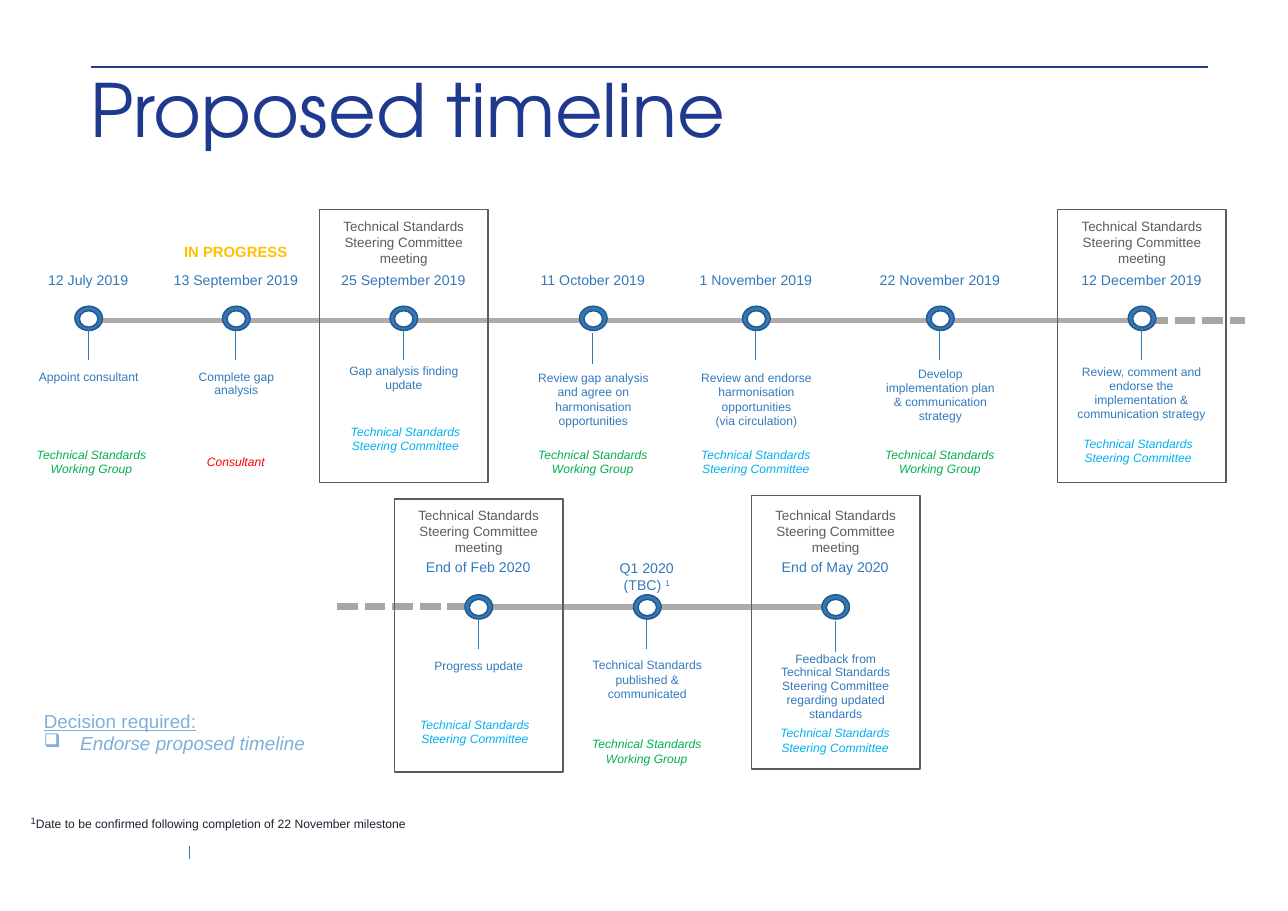
from dataclasses import dataclass

from lxml import etree
from pptx import Presentation
from pptx import util as u
from pptx.dml.color import RGBColor
from pptx.enum import dml, shapes, text
from pptx.oxml.ns import qn

PX = 9144  # 100 px to the inch
NAVY, TITLE_BLUE = RGBColor(0x24, 0x3B, 0x87), RGBColor(0x1E, 0x39, 0x8D)
BLUE, RIM, PALE = RGBColor(0x32, 0x79, 0xBB), RGBColor(0x25, 0x5A, 0x8A), RGBColor(0x7E, 0xAF, 0xDC)
WHITE, INK, SLATE = RGBColor(255, 255, 255), RGBColor(0x1A, 0x23, 0x31), RGBColor(0x5B, 0x5C, 0x5E)
BAR, DASH = RGBColor(0xAF, 0xAB, 0xAB), RGBColor(0xA6, 0xA6, 0xA6)
CYAN, GREEN = RGBColor(0, 0xB0, 0xF0), RGBColor(0, 0xB0, 0x50)
RED, AMBER = RGBColor(255, 0, 0), RGBColor(255, 0xC0, 0)

COMMITTEE = "Technical Standards Steering Committee"
GROUP = "Technical Standards Working Group"
OWNER_COLOURS = {COMMITTEE: CYAN, GROUP: GREEN, "Consultant": RED}


@dataclass
class Milestone:
    """One stop: x is its centre; frame is the top of a meeting frame, if any."""
    x: int
    date: object
    task: object
    task_top: int
    owner: str
    owner_top: int
    owner_shift: int = 0
    task_width: int = 125
    spacing: float = 0.95
    stem_gap: int = 21
    frame: int = 0


ROW_2019 = [
    Milestone(80, "12 July 2019", "Appoint consultant", 331, GROUP, 401, 3),
    Milestone(214, "13 September 2019", "Complete gap analysis", 331, "Consultant", 408),
    Milestone(366, "25 September 2019", "Gap analysis finding update", 326, COMMITTEE, 380, 2,
              frame=190),
    Milestone(538, "11 October 2019",
              "Review gap analysis and agree on harmonisation opportunities", 331, GROUP, 401,
              spacing=1.0, stem_gap=24),
    Milestone(686, "1 November 2019",
              ["Review and endorse harmonisation opportunities", "(via circulation)"], 331,
              COMMITTEE, 401, spacing=1.0),
    Milestone(853, "22 November 2019", "Develop implementation plan & communication strategy",
              329, GROUP, 401),
    Milestone(1036, "12 December 2019",
              "Review, comment and endorse the implementation & communication strategy", 327,
              COMMITTEE, 391, -3, task_width=142, frame=190),
]
ROW_2020 = [
    Milestone(434, "End of Feb 2020", "Progress update", 594, COMMITTEE, 646, -3, frame=453),
    Milestone(587, ["Q1 2020", [("(TBC) ", {}), ("1", {"raised": True})]],
              "Technical Standards published & communicated", 592, GROUP, 664, spacing=1.0),
    Milestone(758, "End of May 2020",
              "Feedback from Technical Standards Steering Committee regarding updated standards",
              587, COMMITTEE, 654, stem_gap=24, frame=450),
]


def format_span(span, size, colour, font="Arial", bold=False, italic=False,
                underline=False, raised=False):
    span.font.size, span.font.name = u.Pt(size), font
    span.font.color.rgb = colour
    span.font.bold, span.font.italic, span.font.underline = bold, italic, underline
    if raised:
        span.font._element.set("baseline", "30000")


def add_bullet(para, symbol, indent):
    props = para._p.get_or_add_pPr()
    props.set("marL", str(indent * PX))
    props.set("indent", str(-indent * PX))
    etree.SubElement(props, qn("a:buChar")).set("char", symbol)


class TimelineSlide:
    def __init__(self, page):
        self.shapes = page.shapes

    def label(self, content, left, top, width, height, centred=False, middle=False,
              spacing=1.0, **style):
        """Content is a string, or a list of paragraphs: strings or lists of (text, style)."""
        box = self.shapes.add_textbox(*(v * PX for v in (left, top, width, height)))
        frame = box.text_frame
        frame.word_wrap = True
        if middle:
            frame.vertical_anchor = text.MSO_ANCHOR.MIDDLE
        lines = [content] if isinstance(content, str) else content
        for number, line in enumerate(lines):
            para = frame.add_paragraph() if number else frame.paragraphs[0]
            para.line_spacing = spacing
            para.alignment = text.PP_ALIGN.CENTER if centred else text.PP_ALIGN.LEFT
            for words, extra in [(line, {})] if isinstance(line, str) else line:
                span = para.add_run()
                span.text = words
                format_span(span, **{**style, **extra})
        return frame

    def caption(self, content, centre, top, width, height, **style):
        self.label(content, centre - width // 2, top, width, height, centred=True, **style)

    def shape(self, kind, left, top, width, height, line, fill=None):
        item = self.shapes.add_shape(kind, *(v * PX for v in (left, top, width, height)))
        item.shadow.inherit = False
        if fill is None:
            item.fill.background()
        else:
            item.fill.solid()
            item.fill.fore_color.rgb = fill
        item.line.color.rgb, item.line.width = line, u.Pt(1)

    def line(self, x1, y1, x2, y2, colour, weight, dashed=False):
        item = self.shapes.add_connector(shapes.MSO_CONNECTOR.STRAIGHT,
                                         *(v * PX for v in (x1, y1, x2, y2)))
        item.line.color.rgb, item.line.width = colour, u.Pt(weight)
        if dashed:
            item.line.dash_style = dml.MSO_LINE.SQUARE_DOT
        etree.SubElement(item._element.spPr, qn("a:effectLst"))

    def milestone(self, stop, ring_top, date_top):
        x, oval = stop.x, shapes.MSO_SHAPE.OVAL
        if stop.frame:
            self.shape(shapes.MSO_SHAPE.RECTANGLE, x - 76, stop.frame, 153, 248, SLATE)
            self.caption(COMMITTEE + " meeting", x, ring_top - 85, 133, 54,
                         size=8.8, colour=SLATE)
        self.shape(oval, x - 12, ring_top, 25, 22, RIM, BLUE)
        self.shape(oval, x - 8, ring_top + 4, 17, 15, RIM, WHITE)
        stem_top = ring_top + stop.stem_gap
        self.line(x, stem_top, x, stem_top + 28, BLUE, 0.5)
        self.caption(stop.date, x, date_top, 142, 30, size=9.2, colour=BLUE,
                     spacing=0.95 if isinstance(stop.date, str) else 1.0)
        self.caption(stop.task, x, stop.task_top, stop.task_width, 70, size=7.9, colour=BLUE,
                     spacing=stop.spacing)
        self.caption(stop.owner, x + stop.owner_shift, stop.owner_top, 120, 50, size=7.9,
                     colour=OWNER_COLOURS[stop.owner], italic=True)


def main():
    deck = Presentation()
    deck.slide_width, deck.slide_height = 1169 * PX, 827 * PX
    slide = TimelineSlide(deck.slides.add_slide(deck.slide_layouts[6]))

    slide.line(83, 61, 1096, 61, NAVY, 1)
    slide.line(172, 768, 172, 780, BLUE, 0.5)
    slide.label("Proposed timeline", 72, 68, 952, 70, middle=True, spacing=0.9,
                size=48, colour=TITLE_BLUE, font="TeX Gyre Adventor")

    slide.shape(shapes.MSO_SHAPE.RECTANGLE, 82, 289, 952, 4, BAR, BAR)
    slide.shape(shapes.MSO_SHAPE.RECTANGLE, 434, 549, 319, 4, BAR, BAR)
    slide.line(1041, 291, 1130, 291, DASH, 4.5, dashed=True)
    slide.line(306, 551, 432, 551, DASH, 4.5, dashed=True)
    for row, ring_top, date_top in ((ROW_2019, 278, 243), (ROW_2020, 540, 503)):
        for stop in row:
            slide.milestone(stop, ring_top, date_top)
    slide.caption("IN PROGRESS", 214, 215, 114, 26, size=9.7, colour=AMBER, bold=True)

    decision = slide.label(
        [[("Decision required:", {"underline": True})],
         [("Endorse proposed timeline", {"italic": True})]],
        30, 639, 283, 51, middle=True, size=12.3, colour=PALE)
    add_bullet(decision.paragraphs[1], "❑", 33)
    slide.label([[("1", {"size": 10.5, "raised": True}),
                  ("Date to be confirmed following completion of 22 November milestone", {})]],
                18, 733, 388, 23, size=7.9, colour=INK)
    deck.save("out.pptx")


if __name__ == "__main__":
    main()
